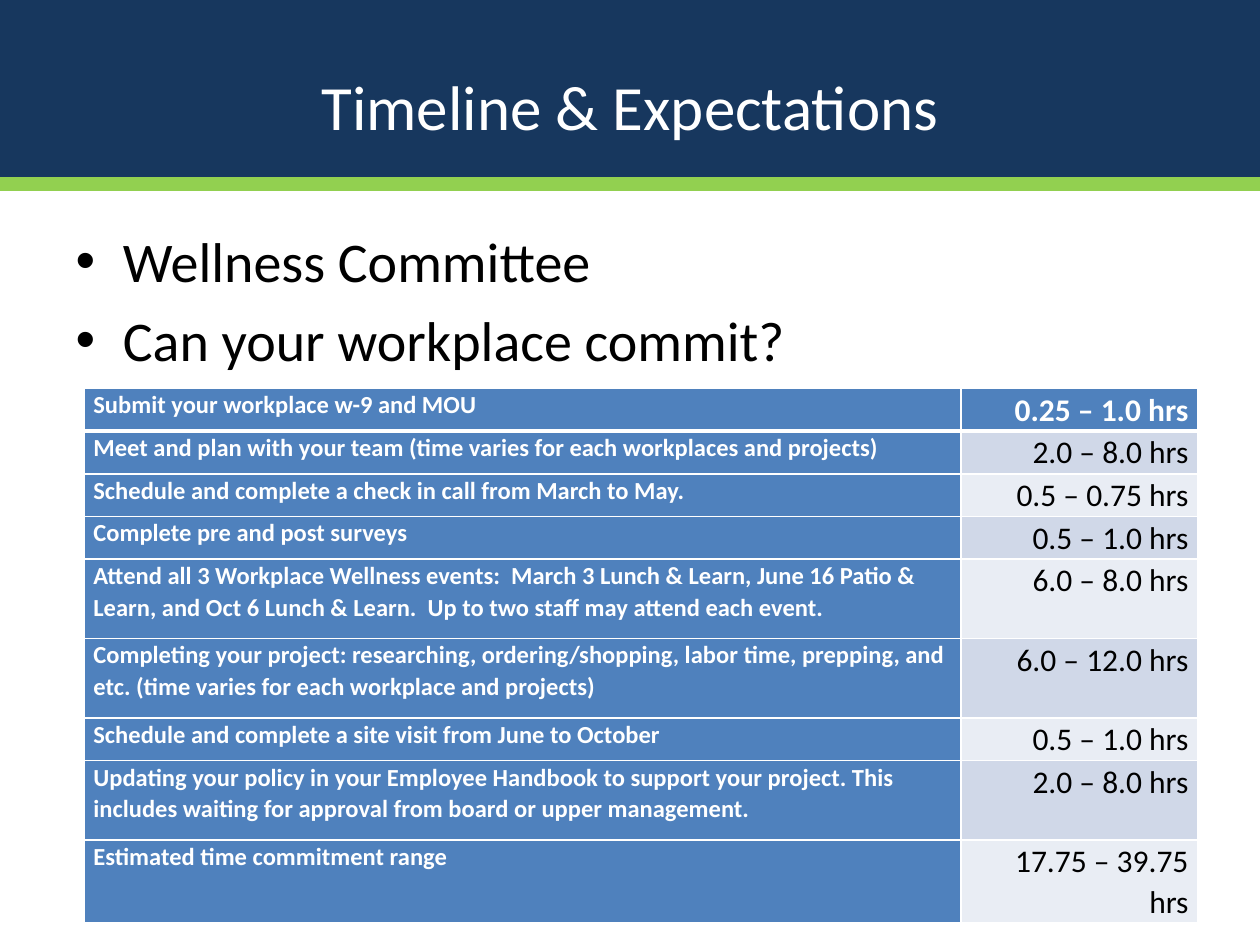
from dataclasses import dataclass

from lxml.etree import SubElement
from pptx import Presentation
from pptx.dml.color import RGBColor
from pptx.enum.shapes import MSO_CONNECTOR as Connector, MSO_SHAPE as Shape
from pptx.enum.text import MSO_ANCHOR as Anchor, PP_ALIGN as Align
from pptx.oxml.ns import qn
from pptx.util import Pt


@dataclass(frozen=True)
class Theme:
    font: str = "Calibri"
    navy: str = "17375E"
    green: str = "92D050"
    blue: str = "4F81BD"
    bands: tuple[str, str] = ("D0D8E8", "E9EDF4")
    white: str = "FFFFFF"
    black: str = "000000"
    title_size: float = 36
    body_size: float = 32
    task_size: float = 14
    hours_size: float = 18


@dataclass(frozen=True)
class Task:
    name: str
    hours: str
    height: float = 24.4


THEME = Theme()
SLIDE_WIDTH, SLIDE_HEIGHT = 720, 540
BAND_HEIGHT = 105.2
TALL_ROW = 45.4
COLUMN_WIDTHS = (500.8, 135)
BULLETS = ("Wellness Committee", "Can your workplace commit?")
TASKS = (
    Task("Submit your workplace w-9 and MOU", "0.25 – 1.0 hrs"),
    Task("Meet and plan with your team (time varies for each workplaces and projects)",
         "2.0 – 8.0 hrs"),
    Task("Schedule and complete a check in call from March to May.", "0.5 – 0.75 hrs"),
    Task("Complete pre and post surveys", "0.5 – 1.0 hrs"),
    Task("Attend all 3 Workplace Wellness events:  March 3 Lunch & Learn, June 16 Patio & "
         "Learn, and Oct 6 Lunch & Learn.  Up to two staff may attend each event.",
         "6.0 – 8.0 hrs", TALL_ROW),
    Task("Completing your project: researching, ordering/shopping, labor time, prepping, "
         "and etc. (time varies for each workplace and projects)",
         "6.0 – 12.0 hrs", TALL_ROW),
    Task("Schedule and complete a site visit from June to October", "0.5 – 1.0 hrs"),
    Task("Updating your policy in your Employee Handbook to support your project. This "
         "includes waiting for approval from board or upper management.",
         "2.0 – 8.0 hrs", TALL_ROW),
    Task("Estimated time commitment range", "17.75 – 39.75 hrs"),
)


def color(value: str) -> RGBColor:
    return RGBColor.from_string(value)


def write(paragraph, text: str, *, size: float, fill: str, bold: bool = False,
          align=None, line_spacing=None) -> None:
    if align is not None:
        paragraph.alignment = align
    if line_spacing is not None:
        paragraph.line_spacing = line_spacing
    run = paragraph.add_run()
    run.text = text
    run.font.name = THEME.font
    run.font.size = Pt(size)
    run.font.bold = bold
    run.font.color.rgb = color(fill)


def place(shape, left: float, top: float, width: float, height: float) -> None:
    shape.left, shape.top = Pt(left), Pt(top)
    shape.width, shape.height = Pt(width), Pt(height)


def add_band(slide) -> None:
    left = (SLIDE_WIDTH - BAND_HEIGHT) / 2
    top = (BAND_HEIGHT - SLIDE_WIDTH) / 2
    band = slide.shapes.add_shape(Shape.RECTANGLE, Pt(left), Pt(top),
                                  Pt(BAND_HEIGHT), Pt(SLIDE_WIDTH))
    band.rotation = 90
    band.shadow.inherit = False
    band.fill.solid()
    band.fill.fore_color.rgb = color(THEME.navy)
    band.line.fill.background()
    slide.shapes.title.element.addprevious(band.element)


def add_rule(slide) -> None:
    rule = slide.shapes.add_connector(Connector.STRAIGHT, 0, Pt(BAND_HEIGHT),
                                      Pt(SLIDE_WIDTH), Pt(BAND_HEIGHT))
    rule.line.color.rgb = color(THEME.green)
    rule.line.width = Pt(8)
    SubElement(rule.element.spPr, qn("a:effectLst"))


def add_borders(cell, *, top: float, bottom: float) -> None:
    properties = cell._tc.get_or_add_tcPr()
    for side, width in (("L", 1), ("R", 1), ("T", top), ("B", bottom)):
        line = SubElement(properties, qn(f"a:ln{side}"), w=str(Pt(width)))
        SubElement(SubElement(line, qn("a:solidFill")), qn("a:srgbClr"), val=THEME.white)


def fill_cell(cell, text: str, row: int, *, background: str, **text_format) -> None:
    cell.margin_left = cell.margin_right = Pt(5)
    cell.margin_top = cell.margin_bottom = 0
    add_borders(cell, top=3 if row == 1 else 1, bottom=3 if row == 0 else 1)
    cell.fill.solid()
    cell.fill.fore_color.rgb = color(background)
    write(cell.text_frame.paragraphs[0], text, line_spacing=1.07, **text_format)


def add_task_table(slide, tasks: tuple[Task, ...]) -> None:
    frame = slide.shapes.add_table(len(tasks), len(COLUMN_WIDTHS), Pt(48.4), Pt(222),
                                   Pt(sum(COLUMN_WIDTHS)),
                                   Pt(sum(task.height for task in tasks)))
    table = frame.table
    for column, width in zip(table.columns, COLUMN_WIDTHS):
        column.width = Pt(width)
    for row, task in enumerate(tasks):
        header = row == 0
        table.rows[row].height = Pt(task.height)
        fill_cell(table.cell(row, 0), task.name, row, background=THEME.blue,
                  size=THEME.task_size, fill=THEME.white, bold=True)
        fill_cell(table.cell(row, 1), task.hours, row,
                  background=THEME.blue if header else THEME.bands[(row - 1) % 2],
                  size=THEME.hours_size, fill=THEME.white if header else THEME.black,
                  bold=header, align=Align.RIGHT)


def main() -> None:
    presentation = Presentation()
    presentation.slide_width, presentation.slide_height = Pt(SLIDE_WIDTH), Pt(SLIDE_HEIGHT)
    slide = presentation.slides.add_slide(presentation.slide_layouts[1])
    add_band(slide)

    title = slide.shapes.title
    place(title, 36, 15, 648, 90)
    title.text_frame.vertical_anchor = Anchor.MIDDLE
    write(title.text_frame.paragraphs[0], "Timeline & Expectations",
          size=THEME.title_size, fill=THEME.white, align=Align.CENTER)

    body = slide.placeholders[1]
    place(body, 36, 126, 648, 356.4)
    for index, bullet in enumerate(BULLETS):
        text_frame = body.text_frame
        paragraph = text_frame.add_paragraph() if index else text_frame.paragraphs[0]
        write(paragraph, bullet, size=THEME.body_size, fill=THEME.black)

    add_task_table(slide, TASKS)
    add_rule(slide)
    presentation.save("out.pptx")


if __name__ == "__main__":
    main()
